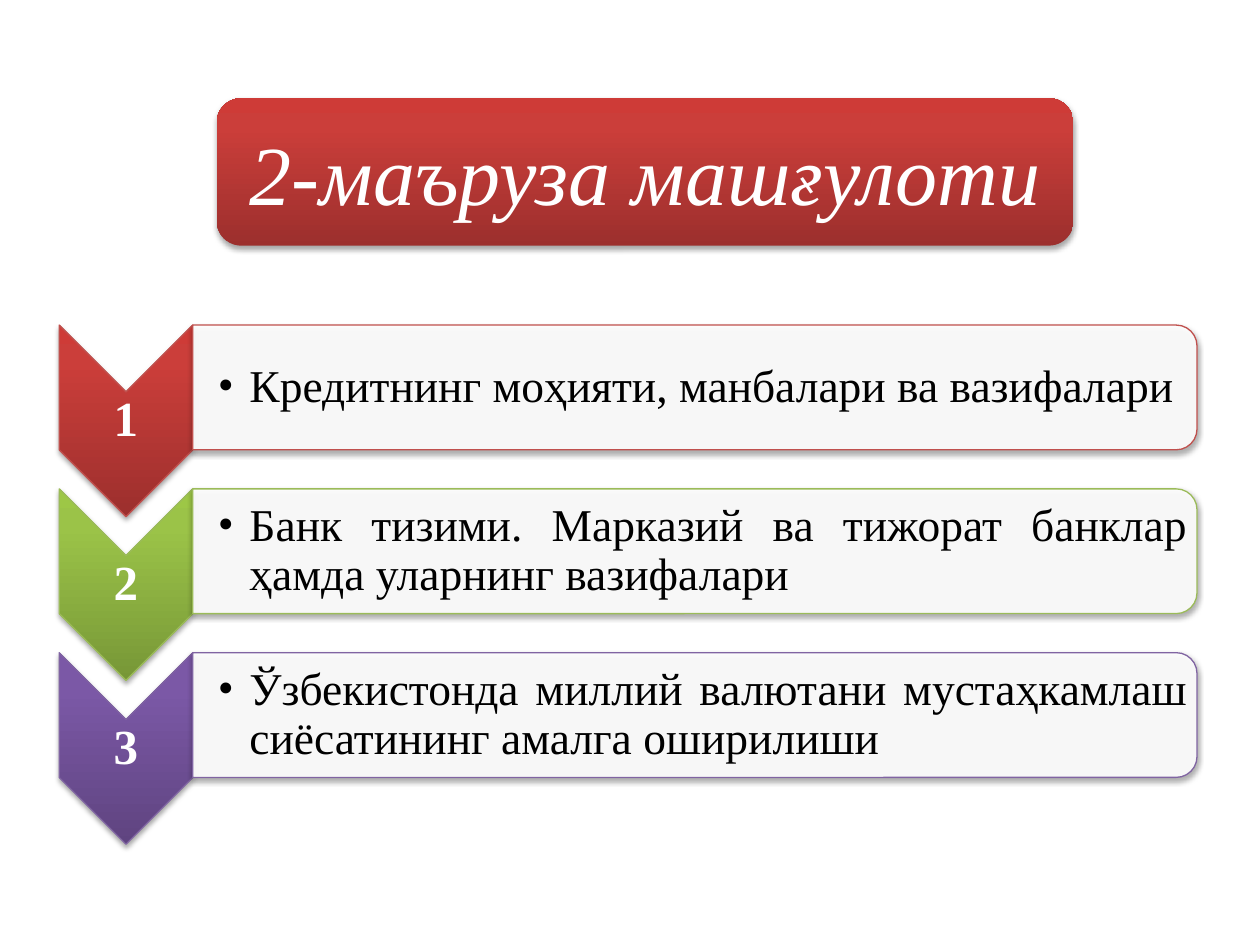
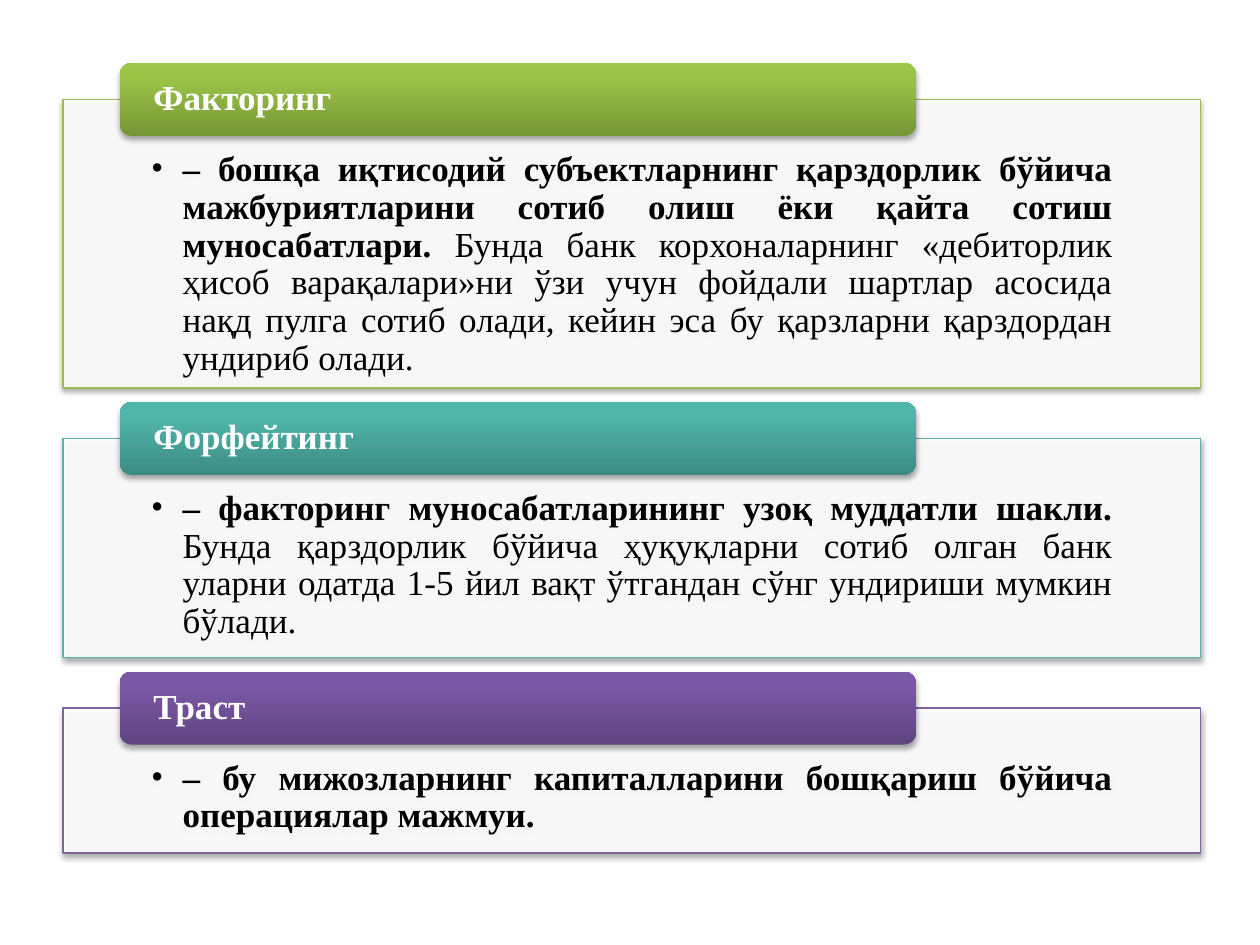
from copy import deepcopy

from lxml import etree
from pptx import Presentation
from pptx.dml.color import RGBColor
from pptx.enum.shapes import MSO_SHAPE
from pptx.enum.text import MSO_ANCHOR, PP_ALIGN
from pptx.oxml.ns import qn
from pptx.util import Inches, Pt

CHEVRON = MSO_SHAPE.CHEVRON
HALF_ROUNDED = MSO_SHAPE.ROUND_2_SAME_RECTANGLE
ROUNDED = MSO_SHAPE.ROUNDED_RECTANGLE
RECTANGLE = MSO_SHAPE.RECTANGLE
CENTER, JUSTIFY = PP_ALIGN.CENTER, PP_ALIGN.JUSTIFY
MIDDLE, TOP = MSO_ANCHOR.MIDDLE, MSO_ANCHOR.TOP

FONT = "Times New Roman"
WHITE = RGBColor(0xFF, 0xFF, 0xFF)
BLACK = RGBColor(0x00, 0x00, 0x00)
RED = RGBColor(0xC0, 0x50, 0x4D)
GREEN = RGBColor(0x9B, 0xBB, 0x59)
TEAL = RGBColor(0x5E, 0xAF, 0xA6)
PURPLE = RGBColor(0x80, 0x64, 0xA2)
GRADIENTS = {
    RED: (RGBColor(0x9C, 0x2F, 0x2D), RGBColor(0xCB, 0x3E, 0x3A), RGBColor(0xCE, 0x3B, 0x37)),
    GREEN: (RGBColor(0x77, 0x97, 0x37), RGBColor(0x9B, 0xC3, 0x48), RGBColor(0x9D, 0xC7, 0x46)),
    TEAL: (RGBColor(0x3D, 0x8B, 0x83), RGBColor(0x50, 0xB5, 0xAA), RGBColor(0x4E, 0xB8, 0xAC)),
    PURPLE: (RGBColor(0x5F, 0x44, 0x80), RGBColor(0x7B, 0x58, 0xA6), RGBColor(0x7C, 0x57, 0xA8)),
}
STOP_POSITIONS = (0, 0.8, 1)

deck = Presentation()
deck.slide_width = Inches(10)
deck.slide_height = Inches(7.5)
CELL = deck.slide_width // 10
BLANK = deck.slide_layouts[6]


def add_block(page, kind, grid, tone, glossy, outlined, rotation=0):
    block = page.shapes.add_shape(kind, *[int(CELL * share) for share in grid])
    block.rotation = rotation
    if glossy:
        block.fill.gradient()
        block.fill.gradient_angle = 90
        gradient = block._element.spPr.find(qn("a:gradFill"))
        gradient.set("rotWithShape", "0")
        stops = gradient.find(qn("a:gsLst"))
        stops.append(deepcopy(stops[-1]))
        for stop, position, color in zip(block.fill.gradient_stops, STOP_POSITIONS, GRADIENTS[tone]):
            stop.position = position
            stop.color.rgb = color
    else:
        block.fill.solid()
        block.fill.fore_color.rgb = WHITE
        color = block._element.spPr.find(qn("a:solidFill"))[0]
        etree.SubElement(color, qn("a:alpha"), val="90000")
    if outlined:
        block.line.color.rgb = tone
        block.line.width = Pt(0.75)
    else:
        block.line.fill.background()
    block.shadow.inherit = False
    effects = block._element.spPr.find(qn("a:effectLst"))
    shadow = etree.SubElement(effects, qn("a:outerShdw"), blurRad=str(Pt(3.1)),
                              dist=str(Pt(1.8)), dir="5400000", rotWithShape="0")
    shade = etree.SubElement(shadow, qn("a:srgbClr"), val=str(BLACK))
    etree.SubElement(shade, qn("a:alpha"), val="35000")
    return block


def write_text(box, spans, size, color, align, anchor, insets, bullet=False, spacing=0.9):
    frame = box.text_frame
    frame.word_wrap = True
    frame.vertical_anchor = anchor
    frame.margin_left, frame.margin_top, frame.margin_right, frame.margin_bottom = [
        int(CELL * inset) for inset in insets]
    para = frame.paragraphs[0]
    if bullet:
        settings = para._p.get_or_add_pPr()
        settings.set("marL", str(Inches(0.25)))
        settings.set("indent", str(-Inches(0.25)))
        etree.SubElement(settings, qn("a:buFont"), typeface=FONT)
        etree.SubElement(settings, qn("a:buChar"), char="•")
    para.alignment = align
    para.line_spacing = spacing
    for words, bold in spans:
        span = para.add_run()
        span.text = words
        span.font.name = FONT
        span.font.size = Pt(size)
        span.font.bold = bold
        span.font.color.rgb = color
    return para


page = deck.slides.add_slide(BLANK)
THIN = (0.02, 0.02, 0.02, 0.02)
TOPIC_INSETS = (0.2, 0.02, 0.02, 0.02)
FIRST_TOP, PITCH = 2.58, 1.3
ARROW_LEFT, ARROW_WIDTH, ARROW_HEIGHT = 0.47, 1.06, 1.52
PANEL_LEFT, PANEL_WIDTH, PANEL_HEIGHT = 1.53, 7.97, 0.99
ARROW_TURN = (ARROW_HEIGHT - ARROW_WIDTH) / 2
PANEL_TURN = (PANEL_WIDTH - PANEL_HEIGHT) / 2

topics = [
    (RED, "Кредитнинг моҳияти, манбалари ва вазифалари"),
    (GREEN, "Банк тизими. Марказий ва тижорат банклар ҳамда уларнинг вазифалари"),
    (PURPLE, "Ўзбекистонда миллий валютани мустаҳкамлаш сиёсатининг амалга оширилиши"),
]
for index, (tone, topic) in enumerate(topics):
    top = FIRST_TOP + index * PITCH
    add_block(page, CHEVRON, (ARROW_LEFT - ARROW_TURN, top + ARROW_TURN, ARROW_HEIGHT, ARROW_WIDTH),
              tone, True, True, 90)
    add_block(page, HALF_ROUNDED,
              (PANEL_LEFT + PANEL_TURN, top - PANEL_TURN, PANEL_HEIGHT, PANEL_WIDTH),
              tone, False, True, 90)
    number_grid = (ARROW_LEFT, top + ARROW_WIDTH / 2, ARROW_WIDTH, ARROW_HEIGHT - ARROW_WIDTH)
    number_box = page.shapes.add_textbox(*[int(CELL * share) for share in number_grid])
    write_text(number_box, [(str(index + 1), True)], 28, WHITE, CENTER, MIDDLE, THIN)
    topic_grid = (PANEL_LEFT, top + 0.05, PANEL_WIDTH - 0.05, PANEL_HEIGHT - 0.1)
    topic_box = page.shapes.add_textbox(*[int(CELL * share) for share in topic_grid])
    write_text(topic_box, [(topic, False)], 26, BLACK, JUSTIFY, MIDDLE, TOPIC_INSETS, bullet=True)

title = add_block(page, ROUNDED, (1.72, 0.78, 6.8, 1.17), RED, True, False)
title_para = write_text(title, [("2-маъруза машғулоти", False)], 48, WHITE, CENTER, MIDDLE,
                        (0.1, 0.05, 0.1, 0.05), spacing=1.0)
title_para.runs[0].font.italic = True

page = deck.slides.add_slide(BLANK)
TAB_HEIGHT, TAB_OVERLAP, GAP = 0.58, 0.29, 0.11
services = [
    (GREEN, 2.29, "Факторинг", [
        ("– бошқа иқтисодий субъектларнинг қарздорлик бўйича мажбуриятларини сотиб олиш ёки "
         "қайта сотиш муносабатлари.", True),
        (" Бунда банк корхоналарнинг «дебиторлик ҳисоб варақалари»ни ўзи учун фойдали шартлар "
         "асосида нақд пулга сотиб олади, кейин эса бу қарзларни қарздордан ундириб олади.", False)]),
    (TEAL, 1.74, "Форфейтинг", [
        ("– факторинг муносабатларининг узоқ муддатли шакли.", True),
        (" Бунда қарздорлик бўйича ҳуқуқларни сотиб олган банк уларни одатда 1-5 йил вақт "
         "ўтгандан сўнг ундириши мумкин бўлади.", False)]),
    (PURPLE, 1.15, "Траст", [
        ("– бу мижозларнинг капиталларини бошқариш бўйича операциялар мажмуи.", True)]),
]
top = 0.5
for tone, height, name, definition in services:
    panel = add_block(page, RECTANGLE, (0.5, top + TAB_OVERLAP, 9.03, height), tone, False, True)
    write_text(panel, definition, 20, BLACK, JUSTIFY, TOP, (0.7, 0.41, 0.7, 0.16), bullet=True)
    tab = add_block(page, ROUNDED, (0.95, top, 6.32, TAB_HEIGHT), tone, True, False)
    write_text(tab, [(name, True)], 20, WHITE, JUSTIFY, MIDDLE, (0.24, 0, 0.24, 0))
    top += TAB_OVERLAP + height + GAP

deck.save("out.pptx")
